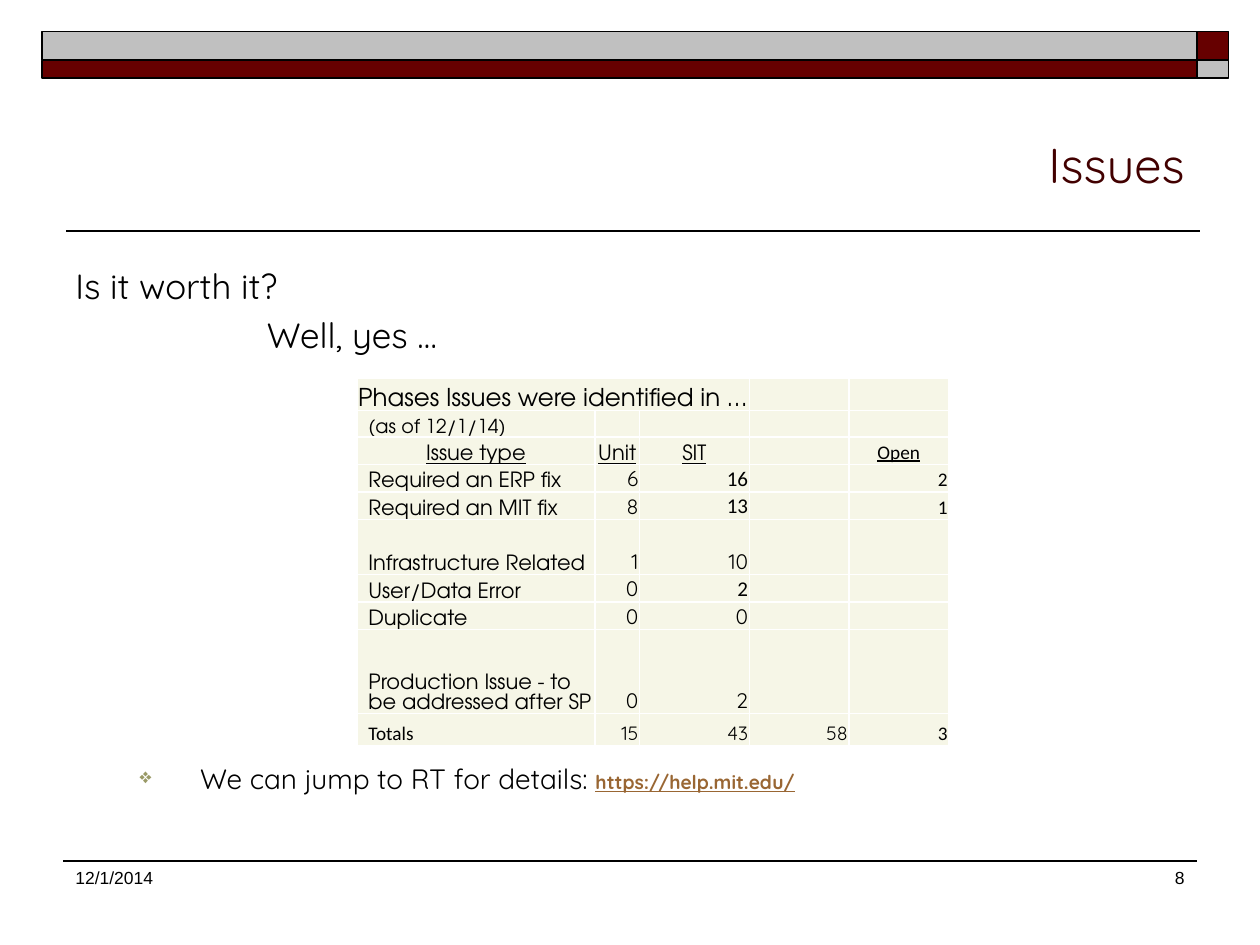
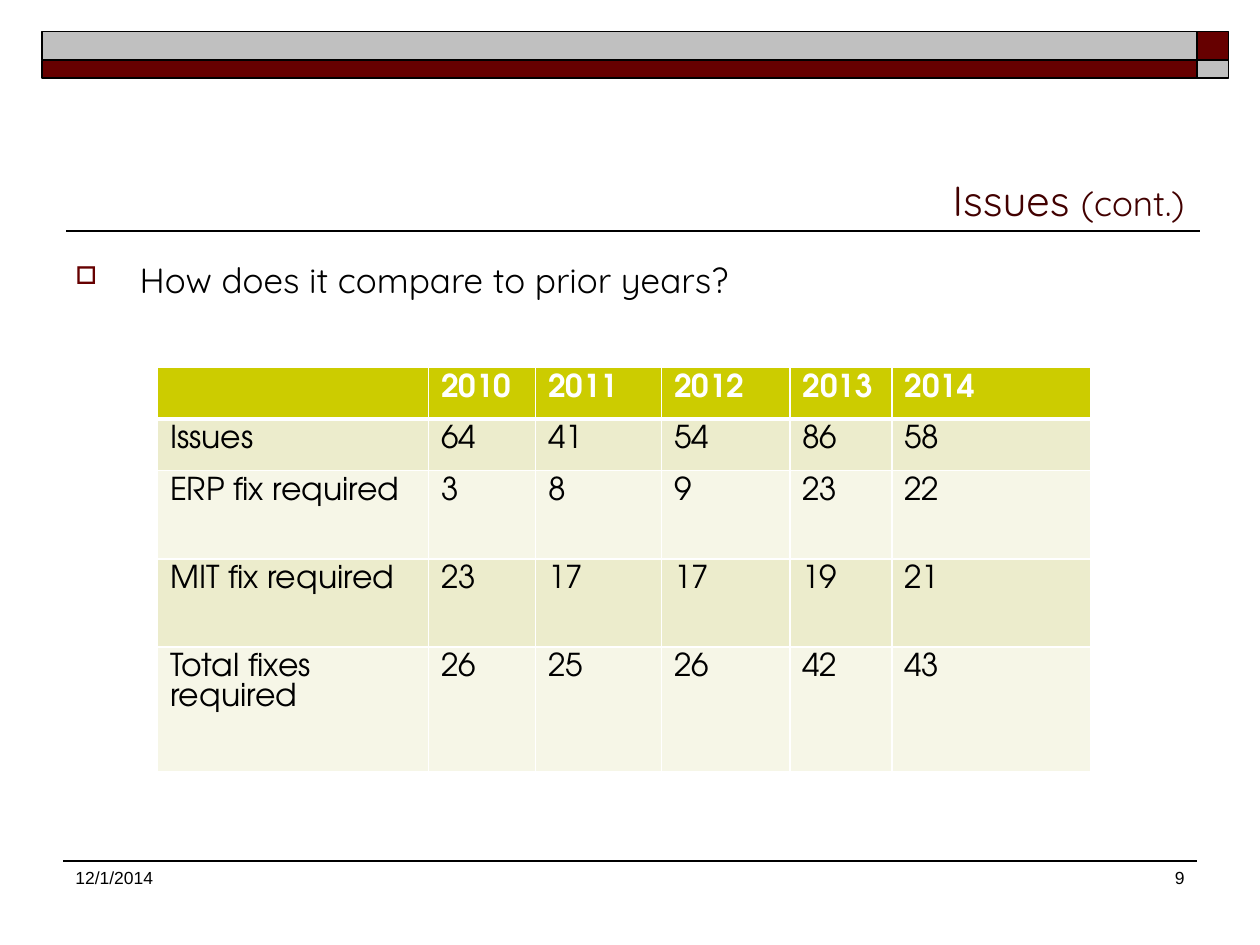
from dataclasses import dataclass

from lxml.etree import SubElement
from pptx import Presentation
from pptx.dml.color import RGBColor
from pptx.enum.shapes import MSO_CONNECTOR as Connector, MSO_SHAPE as Preset
from pptx.enum.text import MSO_ANCHOR as Anchor, PP_ALIGN as Align
from pptx.oxml.ns import qn
from pptx.util import Pt


@dataclass(frozen=True)
class Theme:
    maroon: str = "660000"
    silver: str = "C0C0C0"
    title: str = "420000"
    ink: str = "000000"
    white: str = "FFFFFF"
    olive: str = "999966"
    link: str = "996633"
    header_fill: str = "CCCC00"
    band_fill: str = "ECECCC"
    pale_fill: str = "F6F6E7"
    text_font: str = "Quicksand"
    table_font: str = "TeX Gyre Adventor"
    number_font: str = "Calibri"
    footer_font: str = "Arial"
    title_size: float = 28
    continued_size: float = 24
    body_size: float = 20
    detail_size: float = 16
    year_size: float = 18
    caption_size: float = 14
    cell_size: float = 12
    small_size: float = 11
    footer_size: float = 10


THEME = Theme()
DATE = "12/1/2014"

PHASES = [
    ["Phases Issues were identified in …", "", "", "", ""],
    ["(as of 12/1/14)", "", "", "", ""],
    ["Issue type", "Unit", "SIT", "", "Open"],
    ["Required an ERP fix", "6", "16", "", "2"],
    ["Required an MIT fix", "8", "13", "", "1"],
    ["Infrastructure Related", "1", "10", "", ""],
    ["User/Data Error", "0", "2", "", ""],
    ["Duplicate", "0", "0", "", ""],
    ["Production Issue - to be addressed after SP", "0", "2", "", ""],
    ["Totals", "15", "43", "58", "3"],
]
CAPTION_ROW, AS_OF_ROW, HEADING_ROW, TOTALS_ROW = 0, 1, 2, 9
OPEN_COLUMN = 4
CALIBRI_SIT_CELLS = {(3, 2), (4, 2), (6, 2)}

YEARS = [
    ["", "2010", "2011", "2012", "2013", "2014"],
    ["Issues", "64", "41", "54", "86", "58"],
    ["ERP fix required", "3", "8", "9", "23", "22"],
    ["MIT fix required", "23", "17", "17", "19", "21"],
    ["Total fixes required", "26", "25", "26", "42", "43"],
]


def color(value):
    return RGBColor.from_string(value)


def set_font(font, name, size, ink=THEME.ink):
    font.name = name
    font.size = Pt(size)
    font.color.rgb = color(ink)


def add_text_box(slide, box, anchor=Anchor.TOP):
    frame = slide.shapes.add_textbox(*map(Pt, box)).text_frame
    frame.word_wrap = True
    frame.vertical_anchor = anchor
    return frame


def set_indent(paragraph, margin, first=0):
    properties = paragraph._p.get_or_add_pPr()
    properties.set("marL", str(Pt(margin)))
    properties.set("indent", str(Pt(first)))
    return properties


def add_bullet(paragraph, margin, hanging, mark, ink, percent):
    properties = set_indent(paragraph, margin, -hanging)
    SubElement(SubElement(properties, qn("a:buClr")), qn("a:srgbClr"), val=ink)
    SubElement(properties, qn("a:buSzPct"), val=str(percent * 1000))
    SubElement(properties, qn("a:buChar"), char=mark)


def add_rule(slide, left, right, y, weight):
    rule = slide.shapes.add_connector(Connector.STRAIGHT, Pt(left), Pt(y), Pt(right), Pt(y))
    rule.line.color.rgb = color(THEME.ink)
    rule.line.width = Pt(weight)
    SubElement(rule._element.spPr, qn("a:effectLst"))


def add_band(slide, box):
    left, top, width, height = box
    corner, upper = 18, 16.5
    columns = [(left, width - corner), (left + width - corner, corner)]
    rows = [(top, upper), (top + upper, height - upper)]
    for row, (y, tall) in enumerate(rows):
        for column, (x, wide) in enumerate(columns):
            block = slide.shapes.add_shape(Preset.RECTANGLE, *map(Pt, (x, y, wide, tall)))
            block.shadow.inherit = False
            block.fill.solid()
            block.fill.fore_color.rgb = color(THEME.silver if row == column else THEME.maroon)
            block.line.color.rgb = color(THEME.ink)
            block.line.width = Pt(1)


def add_title(slide, box, parts):
    paragraph = add_text_box(slide, box, Anchor.BOTTOM).paragraphs[0]
    paragraph.alignment = Align.RIGHT
    set_font(paragraph.font, THEME.text_font, parts[0][1], THEME.title)
    for text, size in parts:
        run = paragraph.add_run()
        run.text = text
        run.font.size = Pt(size)


def add_footer(slide, box, number):
    left, top, width, height = box
    add_rule(slide, left, left + width, top, 0.75)
    date_width, number_width = 132, 150
    for text, x, wide, alignment in (
        (DATE, left, date_width, Align.LEFT),
        (str(number), left + width - number_width, number_width, Align.RIGHT),
    ):
        paragraph = add_text_box(slide, (x, top, wide, height)).paragraphs[0]
        paragraph.text = text
        paragraph.alignment = alignment
        set_font(paragraph.font, THEME.footer_font, THEME.footer_size)


def add_frame(presentation, number):
    slide = presentation.slides.add_slide(presentation.slide_layouts[6])
    add_rule(slide, 38, 686, 132, 1)
    add_band(slide, (24, 18, 678, 26.5))
    add_footer(slide, (36, 492, 648, 36), number)
    return slide


def style_cell(cell, fill, margins, bottom_weight=1):
    properties = cell._tc.get_or_add_tcPr()
    for side in "LRTB":
        weight = bottom_weight if side == "B" else 1
        line = SubElement(properties, qn(f"a:ln{side}"), w=str(Pt(weight)))
        SubElement(SubElement(line, qn("a:solidFill")), qn("a:srgbClr"), val=THEME.white)
    cell.fill.solid()
    cell.fill.fore_color.rgb = color(fill)
    cell.margin_left, cell.margin_top, cell.margin_right, cell.margin_bottom = map(Pt, margins)


def fill_cell(cell, text, name, size, ink=THEME.ink):
    paragraph = cell.text_frame.paragraphs[0]
    if text:
        paragraph.text = text
    else:
        paragraph._p.get_or_add_endParaRPr().set("sz", str(size * 100))
    set_font(paragraph.font, name, size, ink)
    return paragraph


def add_grid(slide, left, top, widths, heights):
    box = map(Pt, (left, top, sum(widths), sum(heights)))
    table = slide.shapes.add_table(len(heights), len(widths), *box).table
    table.first_row = table.horz_banding = False
    for column, width in zip(table.columns, widths):
        column.width = Pt(width)
    for row, height in zip(table.rows, heights):
        row.height = Pt(height)
    return table


def phase_font(row, column):
    if column == OPEN_COLUMN or (row, column) in CALIBRI_SIT_CELLS or (row, column) == (TOTALS_ROW, 0):
        return THEME.number_font
    if column == 0 or row == HEADING_ROW:
        return THEME.table_font
    return THEME.text_font


def phase_size(row, column):
    if row == CAPTION_ROW and column == 0:
        return THEME.caption_size
    if row in (CAPTION_ROW, AS_OF_ROW, TOTALS_ROW) or column == OPEN_COLUMN:
        return THEME.small_size
    return THEME.cell_size


def add_phase_table(slide, left, top):
    widths = [136, 25.5, 62.7, 57, 57]
    heights = [18.7, 15.1, 15.7, 15.7, 15.7, 31.6, 15.7, 15.7, 48, 18.2]
    table = add_grid(slide, left, top, widths, heights)
    for row, texts in enumerate(PHASES):
        for column, text in enumerate(texts):
            cell = table.cell(row, column)
            is_label = column == 0 and row not in (CAPTION_ROW, HEADING_ROW)
            style_cell(cell, THEME.pale_fill, (6.5 if is_label else 0.7, 0.7, 0.7, 0))
            cell.vertical_anchor = Anchor.BOTTOM
            paragraph = fill_cell(cell, text, phase_font(row, column), phase_size(row, column))
            if row == HEADING_ROW:
                paragraph.alignment = Align.CENTER
                paragraph.font.underline = True
            elif column:
                paragraph.alignment = Align.RIGHT
    table.cell(CAPTION_ROW, 0).merge(table.cell(CAPTION_ROW, 2))


def add_year_table(slide, left, top):
    widths = [154.8, 61.2, 72, 73.4, 58.3, 113.8]
    heights = [29.5, 29.5, 50.4, 50.4, 71.5]
    table = add_grid(slide, left, top, widths, heights)
    for row, texts in enumerate(YEARS):
        is_header = row == 0
        band = THEME.band_fill if row % 2 else THEME.pale_fill
        for column, text in enumerate(texts):
            cell = table.cell(row, column)
            style_cell(cell, THEME.header_fill if is_header else band,
                       (7.2, 3.6, 7.2, 3.6), 3 if is_header else 1)
            paragraph = fill_cell(cell, text, THEME.table_font, THEME.year_size,
                                  THEME.white if is_header else THEME.ink)
            paragraph.font.bold = is_header


def add_worth_text(slide, box):
    frame = add_text_box(slide, box)
    question = frame.paragraphs[0]
    question.text = "Is it worth it?"
    answer = frame.add_paragraph()
    answer.text = "Well, yes …"
    set_indent(answer, 109.4)
    answer.space_before = Pt(4)
    for paragraph in (question, answer):
        set_font(paragraph.font, THEME.text_font, THEME.body_size)

    details = frame.add_paragraph()
    add_bullet(details, 71.3, 34.6, "❖", THEME.olive, 75)
    details.line_spacing = 0.9
    details.space_before = Pt(234)
    set_font(details.font, THEME.text_font, THEME.detail_size)
    details.add_run().text = "We can jump to RT for details: "
    address = details.add_run()
    address.text = "https://help.mit.edu/"
    set_font(address.font, THEME.text_font, THEME.small_size, THEME.link)
    address.font.bold = address.font.underline = True


def add_compare_text(slide, box):
    paragraph = add_text_box(slide, box).paragraphs[0]
    paragraph.text = "How does it compare to prior years?"
    add_bullet(paragraph, 36.7, 36.7, "□", THEME.maroon, 70)
    set_font(paragraph.font, THEME.text_font, THEME.body_size)


def build_issues(presentation):
    slide = add_frame(presentation, 8)
    add_title(slide, (36, 42, 648, 72), [("Issues", THEME.title_size)])
    add_worth_text(slide, (36, 147.6, 648, 338.4))
    add_phase_table(slide, 204, 216)


def build_comparison(presentation):
    slide = add_frame(presentation, 9)
    add_title(slide, (36, 42, 648, 90),
              [("Issues ", THEME.continued_size), ("(cont.)", THEME.body_size)])
    add_compare_text(slide, (36, 144, 648, 338.4))
    add_year_table(slide, 90, 210)


def main():
    presentation = Presentation()
    presentation.slide_width, presentation.slide_height = Pt(720), Pt(540)
    build_issues(presentation)
    build_comparison(presentation)
    presentation.save("out.pptx")


if __name__ == "__main__":
    main()
